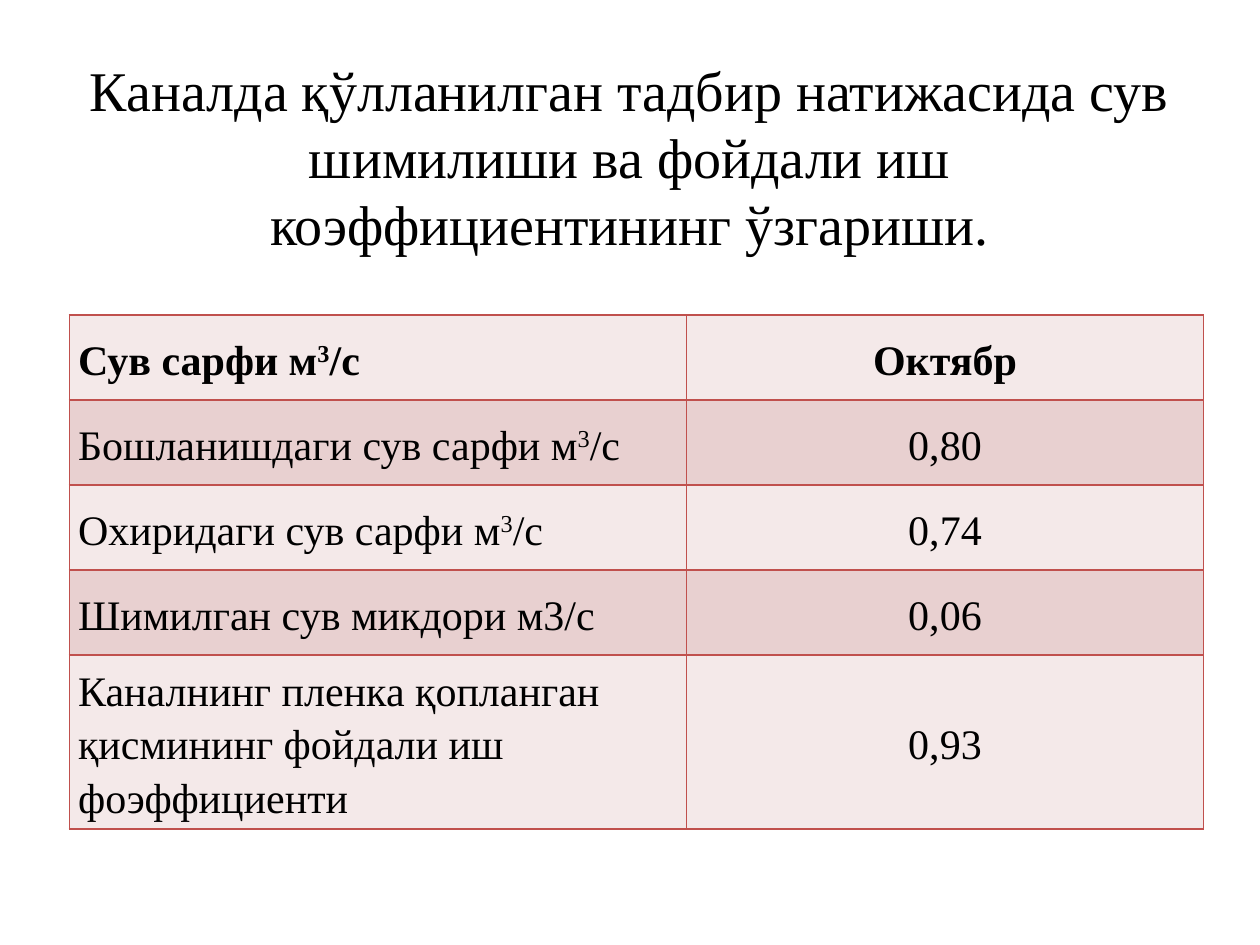
from pptx import Presentation
from pptx.dml.color import RGBColor
from pptx.enum.text import MSO_ANCHOR, PP_ALIGN
from pptx.oxml import parse_xml
from pptx.oxml.ns import nsdecls
from pptx.util import Inches, Pt

LEFT, CENTER = PP_ALIGN.LEFT, PP_ALIGN.CENTER
MIDDLE = MSO_ANCHOR.MIDDLE
BLACK = RGBColor(0x00, 0x00, 0x00)
RED = RGBColor(0xC0, 0x50, 0x4D)
BANDS = (RGBColor(0xF4, 0xE9, 0xE9), RGBColor(0xE8, 0xD0, 0xD0))

TITLE = ("Каналда қўлланилган тадбир натижасида сув шимилиши ва "
         "фойдали иш коэффициентининг ўзгариши.")
WATER_ROWS = (
    ("Сув сарфи м³/с", "Октябр"),
    ("Бошланишдаги сув сарфи м³/с", "0,80"),
    ("Охиридаги сув сарфи м³/с", "0,74"),
    ("Шимилган сув микдори м3/с", "0,06"),
    ("Каналнинг пленка қопланган қисмининг фойдали иш фоэффициенти", "0,93"),
)


class SlideWriter:
    """Holds the text style and current slide, placing elements by shares of its size."""

    font = "Times New Roman"

    def __init__(self, deck):
        self.width, self.height = deck.slide_width, deck.slide_height
        self.slide = deck.slides.add_slide(deck.slide_layouts[6])

    def area(self, left, top, width, height):
        return (round(left * self.width), round(top * self.height),
                round(width * self.width), round(height * self.height))

    def span(self, para, text, size, bold=False, raised=False):
        span = para.add_run()
        span.text = text
        span.font.name = self.font
        span.font.size = Pt(size)
        span.font.bold = bold
        span.font.color.rgb = BLACK
        if raised:
            span._r.get_or_add_rPr().set("baseline", "30000")

    def title(self, text, *shares):
        box = self.slide.shapes.add_textbox(*self.area(*shares))
        frame = box.text_frame
        frame.word_wrap = True
        frame.vertical_anchor = MIDDLE
        para = frame.paragraphs[0]
        para.alignment = CENTER
        self.span(para, text, 32)

    def cell(self, cell, text, fill, align, bold):
        cell.vertical_anchor = MIDDLE
        cell.margin_left = cell.margin_right = Inches(0.07)
        cell.margin_top = cell.margin_bottom = 0
        para = cell.text_frame.paragraphs[0]
        para.alignment = align
        para.line_spacing = 1.15
        before, power, after = text.partition("³")
        self.span(para, before, 24, bold)
        if power:
            self.span(para, "3", 24, bold, raised=True)
            self.span(para, after, 24, bold)
        properties = cell._tc.get_or_add_tcPr()
        for side in "LRTB":
            properties.append(parse_xml(
                f'<a:ln{side} {nsdecls("a")} w="{Pt(1)}"><a:solidFill>'
                f'<a:srgbClr val="{RED}"/></a:solidFill></a:ln{side}>'))
        cell.fill.solid()
        cell.fill.fore_color.rgb = fill

    def table(self, rows, column_shares, row_share, left, top):
        shares = left, top, sum(column_shares), row_share * len(rows)
        table = self.slide.shapes.add_table(
            len(rows), len(column_shares), *self.area(*shares)).table
        for column, share in zip(table.columns, column_shares):
            column.width = round(share * self.width)
        for r, texts in enumerate(rows):
            table.rows[r].height = round(row_share * self.height)
            for c, text in enumerate(texts):
                self.cell(table.cell(r, c), text, BANDS[r % 2],
                          CENTER if c else LEFT, bold=r == 0)


def main():
    deck = Presentation()
    deck.slide_width, deck.slide_height = Inches(10), Inches(7.5)
    writer = SlideWriter(deck)
    writer.title(TITLE, 0.05, 0.04, 0.9, 0.25)
    writer.table(WATER_ROWS, (0.49, 0.41), 0.09, 0.055, 1 / 3)
    deck.save("out.pptx")


if __name__ == "__main__":
    main()
